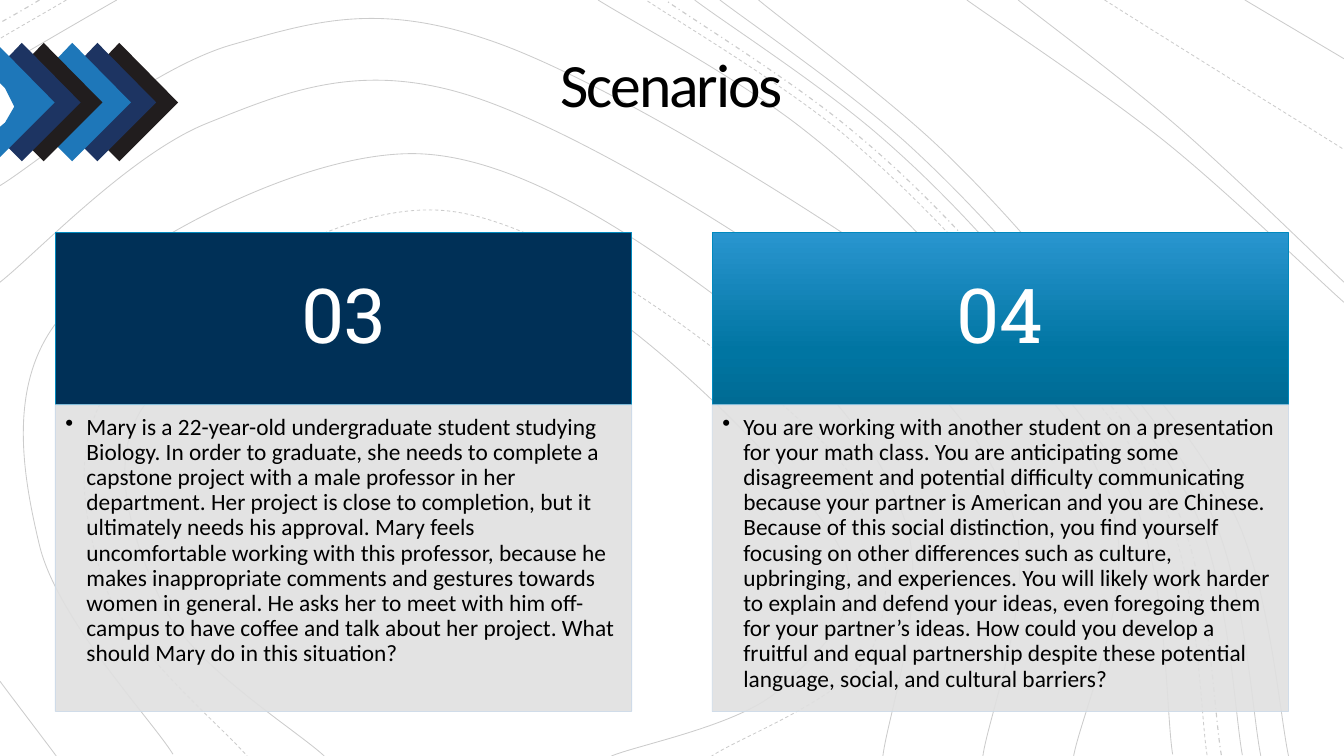
import copy
import pptx
import pptx.dml.color
import pptx.enum.dml
import pptx.enum.shapes
import pptx.enum.text
import pptx.oxml.ns
import pptx.util

qn = pptx.oxml.ns.qn
inch = pptx.util.Inches
DASH = pptx.enum.dml.MSO_LINE
ALIGN = pptx.enum.text.PP_ALIGN
ANCHOR = pptx.enum.text.MSO_ANCHOR

# Content
TITLE = "Scenarios"
CARDS = [
    ("03", "Mary is a 22-year-old undergraduate student studying Biology. In order to graduate, "
     "she needs to complete a capstone project with a male professor in her department. Her "
     "project is close to completion, but it ultimately needs his approval. Mary feels "
     "uncomfortable working with this professor, because he makes inappropriate comments and "
     "gestures towards women in general. He asks her to meet with him off- campus to have coffee "
     "and talk about her project. What should Mary do in this situation?"),
    ("04", "You are working with another student on a presentation for your math class. You are "
     "anticipating some disagreement and potential difficulty communicating because your partner "
     "is American and you are Chinese. Because of this social distinction, you find yourself "
     "focusing on other differences such as culture, upbringing, and experiences. You will likely "
     "work harder to explain and defend your ideas, even foregoing them for your partner’s ideas. "
     "How could you develop a fruitful and equal partnership despite these potential language, "
     "social, and cultural barriers?"),
]

# Theme
THEME = {
    "ink": "000000", "white": "FFFFFF", "navy": "003057", "edge": "0089BE",
    "panel": "E0E0E0", "rim": "CCDAE8",
    "fade": [(0, "2995CF"), (0.69, "0075A2"), (1, "006B94")],
    "arrows": ["211D1E", "1D3462", "1E77B9"],
    "body": "Calibri", "slab": "Roboto Slab",
    "title": 52.8, "number": 65, "text": 20,
}

# Grid in inches
WIDE, HIGH = 16, 9
SIDE, GAP, TOP, HEAD, BODY = 0.66, 0.96, 2.77, 2.05, 3.65
COL = (WIDE - 2 * SIDE - GAP) / 2

# Contours: points that a smooth line passes through, in hundredths of an inch
SOLID, BROKEN, DOTTED = DASH.SOLID, DASH.DASH, DASH.DASH_DOT
RINGS = [
    (SOLID, [(1051, 901), (1079, 625), (886, 378), (494, 183), (81, 368), (47, 649), (206, 898)]),
    (SOLID, [(728, 900), (931, 818), (989, 634), (577, 297), (182, 470), (194, 720), (386, 900)]),
    (BROKEN, [(846, 901), (1041, 766), (981, 528), (532, 251), (146, 442), (124, 694), (295, 901)]),
    (SOLID, [(1170, 901), (1207, 617), (1005, 367), (550, 111), (246, 147), (0, 336)]),
    (SOLID, [(1278, 901), (1327, 617), (1132, 368), (597, 53), (277, 53), (0, 221)]),
    (SOLID, [(0, 811), (67, 900)]),
    (SOLID, [(1600, 360), (1385, 167), (1151, 0)]),
    (SOLID, [(1600, 336), (1400, 149), (1212, 0)]),
    (BROKEN, [(1315, 0), (1600, 178)]),
    (SOLID, [(1482, 0), (1600, 70)]),
]
# A sheaf of lines between an inner and an outer one, each at a share of the way
INNER = [(1396, 898), (1350, 597), (1155, 345), (950, 149), (712, 0)]
OUTER = [(1534, 900), (1474, 622), (1307, 386), (1120, 177), (903, 0)]
SHEAF = [(SOLID, 0), (BROKEN, 0.3), (DOTTED, 0.42), (SOLID, 0.6), (SOLID, 0.76), (SOLID, 1)]
# Corner lines, by where they leave the top edge
CORNER, SLOPE = [(SOLID, 139), (BROKEN, 79), (DOTTED, 47)], 0.58

# Chevrons: one outline and the lefts it repeats at
ARROW = [(20, 51), (0, 72), (31, 105), (42, 127), (31, 146), (0, 172), (20, 192), (90, 122)]
LEFTS = [122, 96, 66, 32, 6, -25]


def rgb(code):
    return pptx.dml.color.RGBColor.from_string(code)


def apply(item, form):
    for name, value in form.items():
        setattr(item, name, value)


def blend(start, end, share):
    return tuple(a + (b - a) * share for a, b in zip(start, end))


def smooth(spots):
    """Add two handles between each pair of neighbours."""
    ends = [spots[0], *spots, spots[-1]]
    out = [spots[0]]
    for a, b, c, d in zip(ends, ends[1:], ends[2:], ends[3:]):
        out.append(tuple(q + (r - p) / 6 for p, q, r in zip(a, b, c)))
        out.append(tuple(r - (s - q) / 6 for q, r, s in zip(b, c, d)))
        out.append(c)
    return out


def clip(spots):
    """Keep the part right of the slide's left edge."""
    out = []
    for a, b in zip(spots, spots[1:] + spots[:1]):
        if a[0] >= 0:
            out.append(a)
        if (a[0] < 0) != (b[0] < 0):
            out.append(blend(a, b, a[0] / (a[0] - b[0])))
    return out


def outline(shapes, spots, close):
    pen = shapes.build_freeform(*spots[0], scale=9144)
    pen.add_line_segments(spots[1:], close=close)
    shape = pen.convert_to_shape()
    shape.shadow.inherit = False
    return shape


def bend(shape):
    """Turn each three straight steps into one Bezier step."""
    steps = list(shape._element.iter(qn("a:lnTo")))
    for i in range(0, len(steps), 3):
        curve = steps[i].makeelement(qn("a:cubicBezTo"), {})
        steps[i].addprevious(curve)
        for step in steps[i:i + 3]:
            curve.append(step[0])
            step.getparent().remove(step)


def paint(shape, code):
    shape.fill.solid()
    shape.fill.fore_color.rgb = rgb(code)


def stroke(shape, code, dash=SOLID):
    shape.line.color.rgb = rgb(code)
    width = 1 if dash == DOTTED else 0.75
    apply(shape.line, {"width": pptx.util.Pt(width), "dash_style": dash})


def thin(shape, share):
    for node in shape._element.spPr.iter(qn("a:srgbClr")):
        node.append(node.makeelement(qn("a:alpha"), {"val": str(share * 1000)}))


def shade(shape, stops):
    shape.fill.gradient()
    shape.fill.gradient_angle = 270
    first = next(shape._element.iter(qn("a:gs")))
    first.addnext(copy.deepcopy(first))
    for stop, (spot, code) in zip(shape.fill.gradient_stops, stops):
        stop.position = spot
        stop.color.rgb = rgb(code)


def block(shapes, left, top, high, edge):
    kind = pptx.enum.shapes.MSO_SHAPE.RECTANGLE
    shape = shapes.add_shape(kind, *map(inch, (left, top, COL, high)))
    shape.shadow.inherit = False
    stroke(shape, THEME[edge])
    return shape


def write(shape, text, font, para, anchor, inset):
    box = shape.text_frame
    sides = ("margin_left", "margin_top", "margin_right", "margin_bottom")
    apply(box, {"word_wrap": True, "vertical_anchor": anchor, **dict(zip(sides, map(inch, inset)))})
    line = box.paragraphs[0]
    apply(line, para)
    run = line.add_run()
    run.text = text
    name, size, color = font
    apply(run.font, {"name": THEME[name], "size": pptx.util.Pt(THEME[size])})
    run.font.color.rgb = rgb(THEME[color])
    return line, run


def main():
    deck = pptx.Presentation()
    apply(deck, {"slide_width": inch(WIDE), "slide_height": inch(HIGH)})
    shapes = deck.slides.add_slide(deck.slide_layouts[6]).shapes

    # Contours
    sheaf = [(dash, [blend(a, b, share) for a, b in zip(INNER, OUTER)]) for dash, share in SHEAF]
    corner = [(dash, [(x, 0), (0, x * SLOPE)]) for dash, x in CORNER]
    for dash, spots in RINGS + sheaf + corner:
        shape = outline(shapes, smooth(spots), False)
        bend(shape)
        shape.fill.background()
        stroke(shape, THEME["ink"], dash)
        thin(shape, 20)

    # Chevrons
    for i, left in enumerate(LEFTS):
        shape = outline(shapes, clip([(x + left, y) for x, y in ARROW]), True)
        paint(shape, THEME["arrows"][i % 3])
        shape.line.fill.background()

    # Title
    box = shapes.add_textbox(*map(inch, (2.72, 0.42, 10.55, 1.25)))
    center = {"alignment": ALIGN.CENTER, "line_spacing": 0.85}
    line, run = write(box, TITLE, ("body", "title", "ink"), center, ANCHOR.MIDDLE, (0, 0.01, 0, 0))
    run.font._element.set("spc", "-180")

    # Cards
    for i, (number, text) in enumerate(CARDS):
        left = SIDE + i * (COL + GAP)
        head = block(shapes, left, TOP, HEAD, "edge")
        if i:
            shade(head, THEME["fade"])
        else:
            paint(head, THEME["navy"])
        write(head, number, ("slab", "number", "white"), {**center, "line_spacing": 0.9},
              ANCHOR.MIDDLE, (0.51, 0.29) * 2)

        panel = block(shapes, left, TOP + HEAD, BODY, "rim")
        paint(panel, THEME["panel"])
        thin(panel, 90)
        form = {"alignment": ALIGN.LEFT, "line_spacing": 0.9, "level": 1}
        line, run = write(panel, text, ("body", "text", "ink"), form,
                          ANCHOR.TOP, (0.12, 0.12, 0.16, 0.17))
        props = line._p.get_or_add_pPr()
        props.set("marL", str(inch(0.25)))
        props.set("indent", str(inch(-0.25)))
        props.append(props.makeelement(qn("a:buChar"), {"char": "•"}))

    deck.save("out.pptx")


if __name__ == "__main__":
    main()
